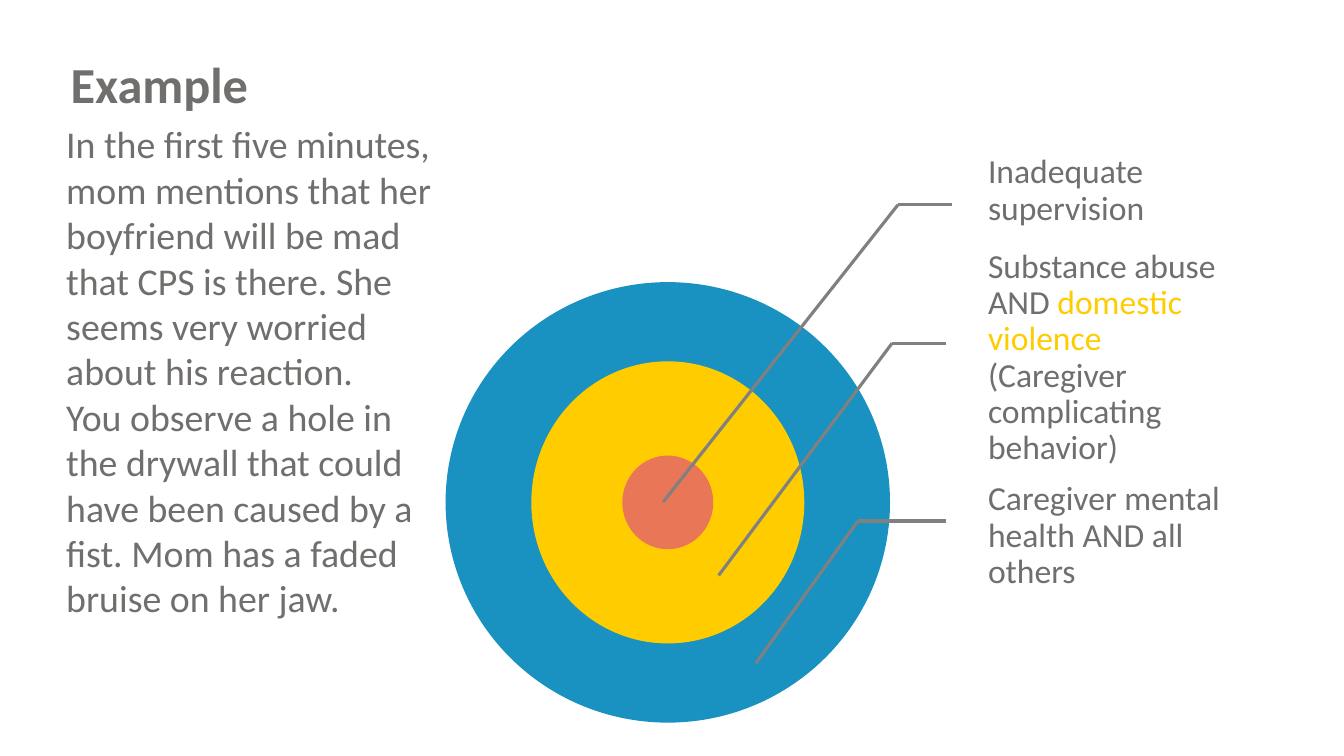
from lxml.etree import SubElement
from pptx import Presentation
from pptx.dml.color import RGBColor
from pptx.enum.shapes import MSO_CONNECTOR as Connector, MSO_SHAPE as Shape
from pptx.enum.text import MSO_ANCHOR as Anchor, MSO_AUTO_SIZE as AutoSize, PP_ALIGN as Align
from pptx.oxml.ns import qn
from pptx.util import Cm, Pt

COLORS = {"text": "716F6D", "blue": "1991C1", "yellow": "FFCC00", "coral": "EA7658", "leader": "808080"}

TITLE = "Example"
STORY = [
    "In the first five minutes, mom mentions that her boyfriend will be mad that CPS is there. "
    "She seems very worried about his reaction.",
    "You observe a hole in the drywall that could have been caused by a fist. "
    "Mom has a faded bruise on her jaw.",
]

CENTER = (16.83, 12.66)
RINGS = [("blue", 11.2, 11.1), ("yellow", 6.88, 7.11), ("coral", 2.29, 2.36)]

LABEL_LEFT = 24.54
CALLOUTS = [
    {"runs": [("Inadequate supervision", "text")],
     "top": 3.94, "width": 6.76, "height": 1.75,
     "elbow": (22.63, 5.16), "label_end": 24.0, "target": (16.71, 12.65)},
    {"runs": [("Substance abuse AND ", "text"), ("domestic violence ", "yellow"),
              ("(Caregiver complicating behavior)", "text")],
     "top": 6.83, "width": 6.99, "height": 4.39,
     "elbow": (22.48, 8.65), "label_end": 23.83, "target": (18.11, 14.5)},
    {"runs": [("Caregiver mental health AND all others", "text")],
     "top": 12.14, "width": 6.58, "height": 2.74,
     "elbow": (21.62, 13.13), "label_end": 23.83, "target": (19.05, 16.71)},
]


def rgb(name):
    return RGBColor.from_string(COLORS[name])


def write(holder, lines, size, bold=False, anchor=Anchor.TOP, spacing=1.0, insets=(0.25, 0.13, 0.25, 0.13)):
    frame = holder.text_frame
    frame.word_wrap = True
    frame.auto_size = AutoSize.NONE
    frame.vertical_anchor = anchor
    frame.margin_left, frame.margin_top, frame.margin_right, frame.margin_bottom = map(Cm, insets)
    paragraph = frame.paragraphs[0]
    paragraph.alignment = Align.LEFT
    paragraph.line_spacing = spacing
    for index, line in enumerate(lines):
        if index:
            paragraph.add_line_break()
        for text, color in line:
            run = paragraph.add_run()
            run.text = text
            run.font.name = "Calibri"
            run.font.size = Pt(size)
            run.font.bold = bold
            run.font.color.rgb = rgb(color)


def add_leader(slide, start, end):
    leader = slide.shapes.add_connector(Connector.STRAIGHT, *map(Cm, start + end))
    leader.line.color.rgb = rgb("leader")
    leader.line.width = Pt(2.25)
    SubElement(leader._element.spPr, qn("a:effectLst"))


def main():
    deck = Presentation()
    deck.slide_width, deck.slide_height = Cm(33.87), Cm(19.05)
    slide = deck.slides.add_slide(deck.slide_layouts[5])

    title = slide.shapes.title
    title.left, title.top, title.width, title.height = map(Cm, (0.89, 0.64, 29.59, 3.12))
    write(title, [[(TITLE, "text")]], 36, bold=True, anchor=Anchor.MIDDLE, spacing=0.9,
          insets=(0.89, 0.13, 0.25, 0.13))

    for color, width, height in RINGS:
        left, top = CENTER[0] - width / 2, CENTER[1] - height / 2
        ring = slide.shapes.add_shape(Shape.OVAL, *map(Cm, (left, top, width, height)))
        ring.shadow.inherit = False
        ring.fill.solid()
        ring.fill.fore_color.rgb = rgb(color)
        ring.line.fill.background()

    story = slide.shapes.add_textbox(*map(Cm, (1.42, 2.92, 9.86, 12.95)))
    write(story, [[(line, "text")] for line in STORY], 27)

    for callout in CALLOUTS:
        elbow = callout["elbow"]
        add_leader(slide, elbow, (callout["label_end"], elbow[1]))
        add_leader(slide, elbow, callout["target"])
        label = slide.shapes.add_textbox(
            *map(Cm, (LABEL_LEFT, callout["top"], callout["width"], callout["height"])))
        write(label, [callout["runs"]], 24, anchor=Anchor.MIDDLE, spacing=0.9,
              insets=(0.36, 0.08, 0.08, 0.08))

    deck.save("out.pptx")


if __name__ == "__main__":
    main()
